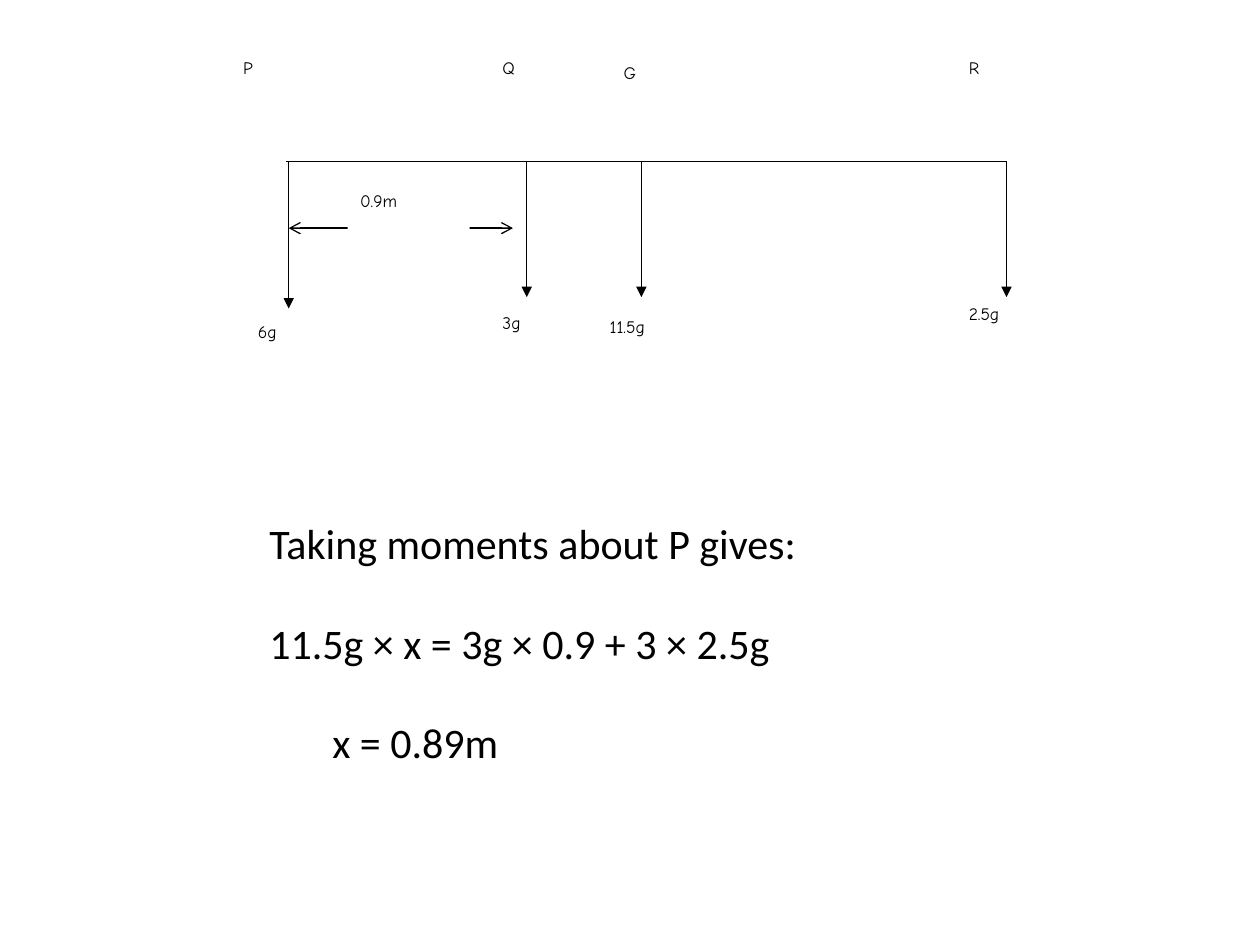
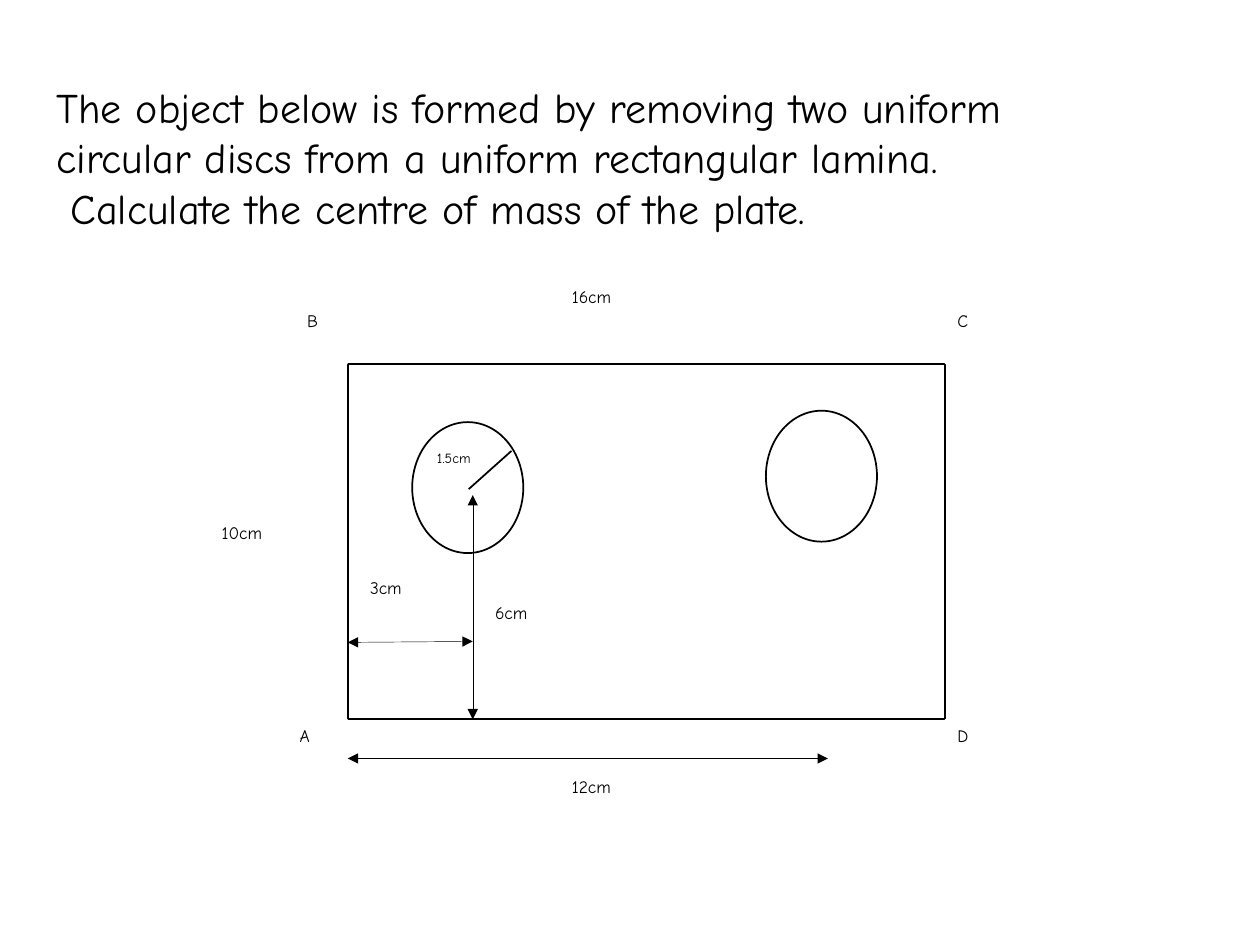
from pptx import Presentation
from pptx.dml.color import RGBColor
from pptx.enum import shapes, text
from pptx.oxml.ns import qn
from pptx.util import Cm, Pt
from lxml import etree

BLACK = RGBColor(0, 0, 0)
WHITE = RGBColor(255, 255, 255)
HAND_FONT = "Comic Neue"
PLAIN_FONT = "Calibri"
LABEL_HEIGHT = 1.22


def style_text(box, font, size, gap=0):
    """Style every paragraph of box, with gap points between paragraphs."""
    frame = box.text_frame
    frame.word_wrap = True
    frame.vertical_anchor = text.MSO_ANCHOR.TOP
    for index, para in enumerate(frame.paragraphs):
        para.alignment = text.PP_ALIGN.LEFT
        para.space_before = Pt(gap if index else 0)
        for span in para.runs:
            span.font.name = font
            span.font.size = Pt(size)
            span.font.color.rgb = BLACK


def add_text(page, lines, left, top, width, height, font, size, gap=0):
    box = page.shapes.add_textbox(Cm(left), Cm(top), Cm(width), Cm(height))
    box.text_frame.text = "\n".join(lines)
    style_text(box, font, size, gap)


def add_outline(page, kind, left, top, width, height, weight=1):
    """Add a white shape with a black outline, or none if weight is 0."""
    shape = page.shapes.add_shape(kind, Cm(left), Cm(top), Cm(width), Cm(height))
    shape.shadow.inherit = False
    shape.fill.solid()
    shape.fill.fore_color.rgb = WHITE
    if weight:
        shape.line.color.rgb = BLACK
        shape.line.width = Pt(weight)
    else:
        shape.line.fill.background()
    return shape


def add_label(page, words, left, top, width, height=LABEL_HEIGHT):
    box = add_outline(page, shapes.MSO_SHAPE.RECTANGLE, left, top, width, height, 0)
    box.text_frame.text = words
    style_text(box, HAND_FONT, 10)


def add_line(page, start, end, weight, head=None, tail=None):
    """Draw a line; head is the arrowhead at start, tail the one at end."""
    line = page.shapes.add_connector(
        shapes.MSO_CONNECTOR.STRAIGHT, *map(Cm, start + end))
    line.line.color.rgb = BLACK
    line.line.width = Pt(weight)
    outline = line.line._get_or_add_ln()
    for tag, arrow in (("a:headEnd", head), ("a:tailEnd", tail)):
        if arrow:
            etree.SubElement(outline, qn(tag), type=arrow)
    etree.SubElement(line._element.spPr, qn("a:effectLst"))


def add_dimension(page, start, end):
    add_line(page, start, end, 0.25, "triangle", "triangle")


def build_beam(page):
    beam_top = 3.25
    for x, arrow_end in ((5.82, 6.22), (10.62, 5.99), (12.93, 5.99), (20.29, 5.99)):
        add_line(page, (x, beam_top), (x, arrow_end), 0.75, tail="triangle")
    add_line(page, (5.82, 4.6), (10.34, 4.6), 0.75, "arrow", "arrow")

    tall = 1.98
    for name, left in (("P", 4.65), ("Q", 9.88), ("R", 19.28)):
        add_label(page, name, left, 1.02, 1.63, tall)
    add_label(page, "G", 12.32, 1.12, 1.22, 1.3)
    for weight, left, top, width, height in (
            ("6g", 4.95, 6.35, 1.63, tall),
            ("3g", 9.88, 6.17, 1.63, tall),
            ("11.5g", 12.04, 6.25, 2.36, 1.4),
            ("2.5g", 19.28, 5.99, 2.34, tall)):
        add_label(page, weight, left, top, width, height)
    add_label(page, "0.9m", 7.01, 3.71, 2.46, tall)
    add_line(page, (5.77, beam_top), (20.27, beam_top), 0.75)

    add_text(page, ["Taking moments about P gives:",
                    "11.5g × x = 3g × 0.9 + 3 × 2.5g",
                    "\tx = 0.89m"],
             5.18, 10.31, 18.11, 5.38, PLAIN_FONT, 24, gap=28)


def build_lamina(page):
    add_text(page, ["The object below is formed by removing two uniform circular "
                    "discs from a uniform rectangular lamina.",
                    " Calculate the centre of mass of the plate."],
             0.89, 1.52, 22, 3.33, HAND_FONT, 24)

    left, top, width, height = 7.01, 7.34, 12.04, 7.16
    right, bottom = left + width, top + height
    add_outline(page, shapes.MSO_SHAPE.RECTANGLE, left, top, width, height)
    for disc_left, disc_top in ((15.44, 8.28), (8.31, 8.51)):
        add_outline(page, shapes.MSO_SHAPE.OVAL, disc_left, disc_top, 2.24, 2.64)
    add_line(page, (9.45, 9.86), (10.31, 9.09), 1)
    add_text(page, ["1.5cm"], 8.56, 8.94, 2.72, LABEL_HEIGHT, HAND_FONT, 8)

    above = top - LABEL_HEIGHT
    for corner, x, y, box_width in (
            ("A", left - 1.22, bottom, 1.22), ("B", left - 1.07, above, 1.07),
            ("C", right, above, 1.45), ("D", right, bottom, 1.19)):
        add_label(page, corner, x, y, box_width)

    add_label(page, "10cm", 4.22, 10.39, 2.26)
    add_label(page, "16cm", 11.28, 5.64, 2.26)
    disc_x = 9.53
    add_dimension(page, (disc_x, bottom), (disc_x, 9.98))
    add_label(page, "6cm", 9.73, 12.01, 2.41)
    add_dimension(page, (left, 15.29), (16.69, 15.29))
    add_label(page, "12cm", 11.28, 15.52, 2.49, 1.37)
    add_dimension(page, (left, 12.95), (disc_x, 12.93))
    add_label(page, "3cm", 7.21, 11.51, 2.06, 1.27)


def main():
    deck = Presentation()
    deck.slide_width, deck.slide_height = Cm(25.4), Cm(19.05)
    for build in (build_beam, build_lamina):
        build(deck.slides.add_slide(deck.slide_layouts[6]))
    deck.save("out.pptx")


if __name__ == "__main__":
    main()
